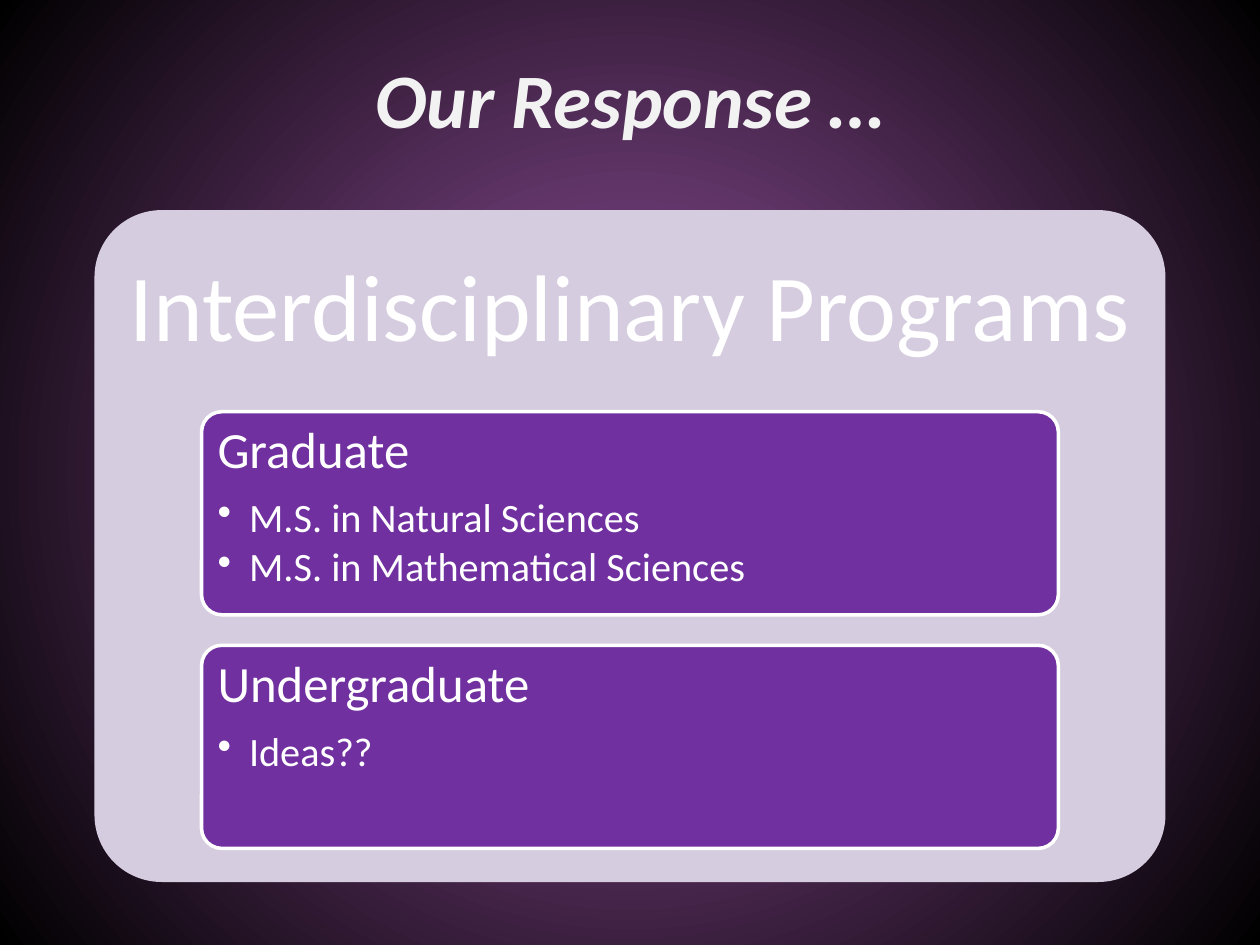
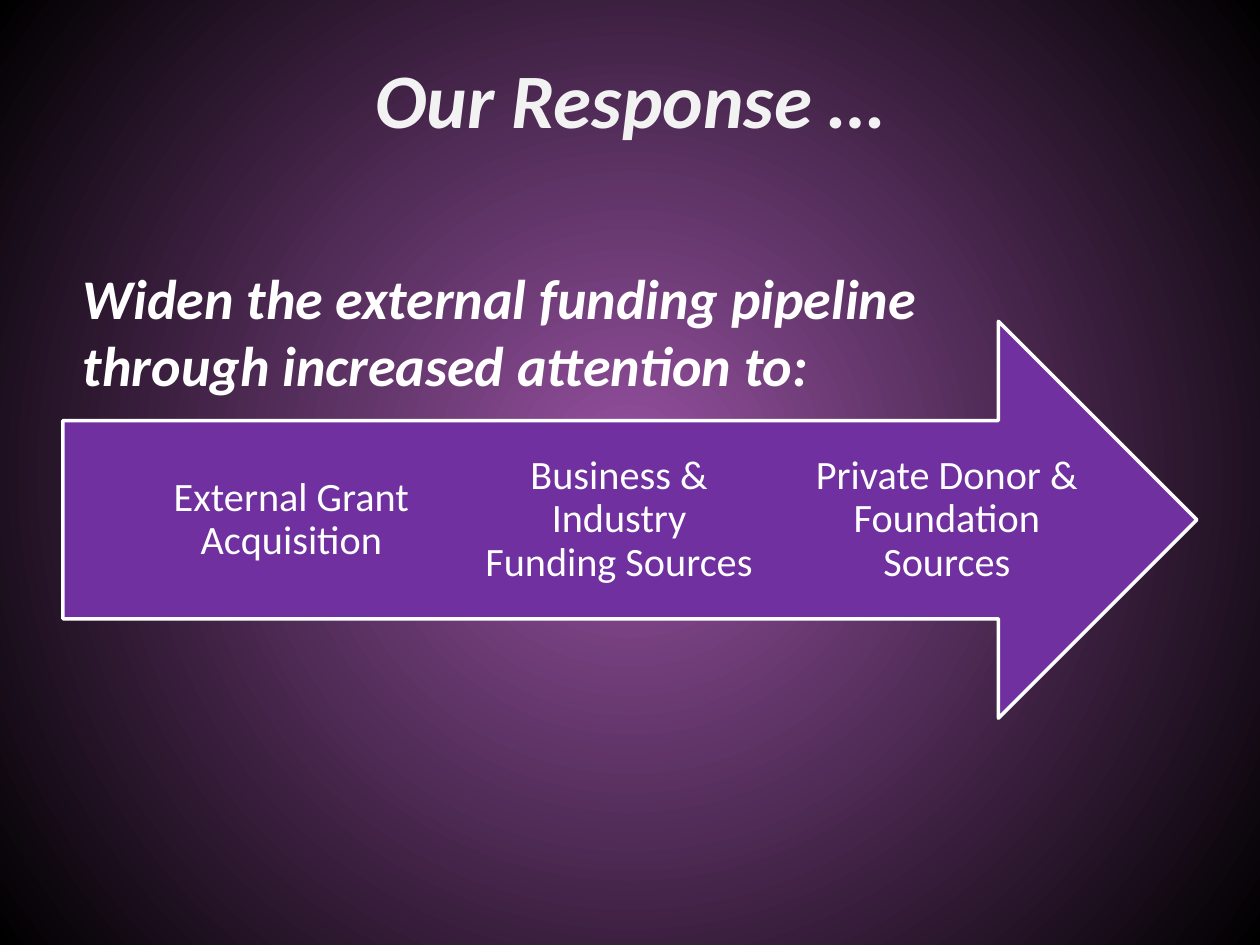
from lxml import etree
from pptx import Presentation
from pptx import util as u
from pptx.dml.color import RGBColor
from pptx.enum import shapes, text
from pptx.oxml import parse_xml
from pptx.oxml.ns import nsdecls, qn

WHITE = RGBColor(0xFF, 0xFF, 0xFF)
TITLE_GREY = RGBColor(0xF2, 0xF2, 0xF2)
LAVENDER = RGBColor(0xD5, 0xCD, 0xDF)
PURPLE = RGBColor(0x70, 0x30, 0xA0)
GLOW = RGBColor(0x96, 0x51, 0xA1)
BLACK = RGBColor(0, 0, 0)

COLS, ROWS = 40, 30
CENTER = text.PP_ALIGN.CENTER
MIDDLE = text.MSO_ANCHOR.MIDDLE
TOP = text.MSO_ANCHOR.TOP
BACKGROUND = f"""<p:bg {nsdecls('p', 'a')}><p:bgPr><a:gradFill rotWithShape="1"><a:gsLst>
<a:gs pos="0"><a:srgbClr val="{GLOW}"/></a:gs><a:gs pos="100000"><a:srgbClr val="{BLACK}"/></a:gs>
</a:gsLst><a:path path="circle"><a:fillToRect l="50000" t="50000" r="50000" b="50000"/></a:path>
</a:gradFill><a:effectLst/></p:bgPr></p:bg>"""


class Deck:
    """Holds the style and the current slide; boxes are (col, row, cols, rows)."""
    font = "Calibri"

    def __init__(self):
        self.prs = Presentation()
        self.prs.slide_width, self.prs.slide_height = u.Inches(10), u.Inches(7.5)
        self.s = None

    def new_slide(self, title):
        self.s = self.prs.slides.add_slide(self.prs.slide_layouts[6])
        self.s.element.cSld.insert(0, parse_xml(BACKGROUND))
        tf = self.textbox((0, 0, COLS, 6.2), anchor=MIDDLE)
        self.paragraph(tf, title, 44, color=TITLE_GREY, align=CENTER, strong=True)

    def place(self, box):
        w, h = self.prs.slide_width / COLS, self.prs.slide_height / ROWS
        return [round(n * unit) for n, unit in zip(box, (w, h, w, h))]

    def frame(self, sp, anchor, insets):
        tf = sp.text_frame
        tf.word_wrap, tf.vertical_anchor = True, anchor
        x, y = insets
        tf.margin_left = tf.margin_right = u.Inches(x)
        tf.margin_top = tf.margin_bottom = u.Inches(y)
        return tf

    def textbox(self, box, anchor=TOP, insets=(0.1, 0.05)):
        return self.frame(self.s.shapes.add_textbox(*self.place(box)), anchor, insets)

    def shape(self, kind, box, fill, outlined=True, corner=None, insets=(0.08, 0.06)):
        sp = self.s.shapes.add_shape(kind, *self.place(box))
        sp.shadow.inherit = False
        sp.fill.solid()
        sp.fill.fore_color.rgb = fill
        if outlined:
            sp.line.color.rgb, sp.line.width = WHITE, u.Pt(2)
        else:
            sp.line.fill.background()
        if corner is not None:
            sp.adjustments[0] = corner
        return self.frame(sp, TOP, insets)

    def paragraph(self, tf, words, size, color=WHITE, align=text.PP_ALIGN.LEFT,
                  strong=False, spacing=None, after=0, bullet=False):
        """Add a paragraph; after is a share of the font size."""
        first = tf.paragraphs[0]
        p = tf.add_paragraph() if first.runs else first
        p.alignment, p.line_spacing = align, spacing
        p.space_after = u.Pt(after * size)
        if bullet:
            p.level = 1
            props = p._p.get_or_add_pPr()
            props.set("marL", str(u.Inches(0.25)))
            props.set("indent", str(-u.Inches(0.25)))
            etree.SubElement(props, qn("a:buChar")).set("char", "•")
        r = p.add_run()
        r.text = words
        r.font.name, r.font.size, r.font.color.rgb = self.font, u.Pt(size), color
        r.font.bold = r.font.italic = strong

    def label(self, box, words, size, insets):
        tf = self.textbox(box, MIDDLE, insets)
        self.paragraph(tf, words, size, align=CENTER, spacing=0.9, after=0.35)

    def card(self, box, heading, items):
        tf = self.shape(shapes.MSO_SHAPE.ROUNDED_RECTANGLE, box, PURPLE, corner=0.1)
        self.paragraph(tf, heading, 29, spacing=0.9, after=0.35)
        for item in items:
            self.paragraph(tf, item, 23, spacing=0.9, after=0.15, bullet=True)


def programs_slide(deck):
    deck.new_slide("Our Response …")
    left, top, width, height = panel = (3, 6.67, 34, 21.33)
    deck.shape(shapes.MSO_SHAPE.ROUNDED_RECTANGLE, panel, LAVENDER, outlined=False, corner=0.1)
    header = 0.3 * height
    deck.label((left, top, width, header), "Interdisciplinary Programs", 54, (0.23, 0.23))

    programs = {
        "Graduate": ["M.S. in Natural Sciences", "M.S. in Mathematical Sciences"],
        "Undergraduate": ["Ideas??"],
    }
    card_height = 0.65 * height / 2.15
    for i, (heading, items) in enumerate(programs.items()):
        card_top = top + header + i * 1.15 * card_height
        deck.card((left + 0.1 * width, card_top, 0.8 * width, card_height), heading, items)


def funding_slide(deck):
    deck.new_slide("Our Response …")
    left, top, width, height = arrow = (2, 10.2, 36, 12.6)
    deck.shape(shapes.MSO_SHAPE.RIGHT_ARROW, arrow, PURPLE)

    sources = ["External Grant Acquisition", "Business & Industry Funding Sources",
               "Private Donor & Foundation Sources"]
    source_width = 8.67
    for i, source in enumerate(sources):
        x = left + 2.92 + i * 1.2 * source_width
        deck.label((x, top + height / 4, source_width, height / 2), source, 23, (0, 0.26))

    tf = deck.textbox((2.24, 8.16, 33.12, 4.72))
    deck.paragraph(tf, "Widen the external funding pipeline through increased attention to:",
                   32, strong=True)


def main():
    deck = Deck()
    programs_slide(deck)
    funding_slide(deck)
    deck.prs.save("out.pptx")


if __name__ == "__main__":
    main()
